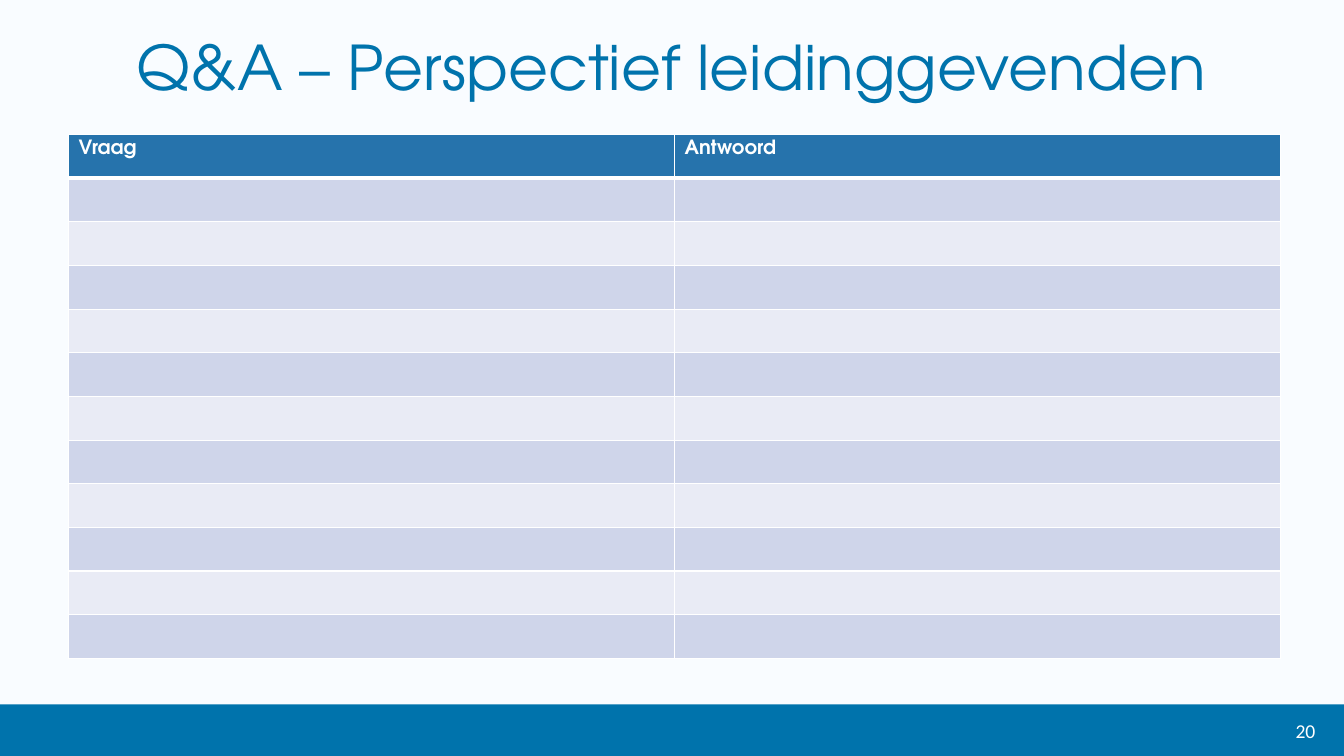
from lxml.etree import SubElement
from pptx import Presentation
from pptx.dml.color import RGBColor
from pptx.enum.shapes import MSO_SHAPE
from pptx.enum.text import MSO_ANCHOR, MSO_AUTO_SIZE, PP_ALIGN
from pptx.oxml.ns import qn
from pptx.util import Cm, Pt

COLORS = {
    "back": "F9FCFF",
    "blue": "0073AC",
    "head": "2673AC",
    "odd": "CFD5EA",
    "even": "E9EBF5",
    "white": "FFFFFF",
}
FONT = "TeX Gyre Adventor"
WIDTH, HEIGHT = Cm(33.87), Cm(19.05)
HEADS = ["Vraag", "Antwoord"]
ROWS = 12


def color(name):
    return RGBColor.from_string(COLORS[name])


def paint(fill, name):
    fill.solid()
    fill.fore_color.rgb = color(name)


def style(para, size, tint, face=FONT, bold=False):
    font = para.font
    font.name, font.size, font.bold = face, Pt(size), bold
    font.color.rgb = color(tint)


def edge(cell, low):
    """Draw white borders, with the bottom one of the given width."""
    props = cell._tc.get_or_add_tcPr()
    sides = {"lnL": 1, "lnR": 1, "lnT": 1, "lnB": low}
    for spot, (side, width) in enumerate(sides.items()):
        line = SubElement(props, qn(f"a:{side}"), w=str(Pt(width)))
        fill = SubElement(line, qn("a:solidFill"))
        SubElement(fill, qn("a:srgbClr"), val=COLORS["white"])
        props.insert(spot, line)


def add_bar(slide):
    top = Cm(17.75)
    bar = slide.shapes.add_shape(MSO_SHAPE.RECTANGLE, 0, top, WIDTH, HEIGHT - top)
    bar.shadow.inherit = False
    paint(bar.fill, "blue")
    bar.line.fill.background()


def add_number(slide, text):
    box = slide.shapes.add_textbox(Cm(27.48), Cm(18.03), Cm(5.92), Cm(0.76))
    frame = box.text_frame
    frame.word_wrap = True
    frame.vertical_anchor = MSO_ANCHOR.MIDDLE
    para = frame.paragraphs[0]
    para.text = text
    para.alignment = PP_ALIGN.RIGHT
    style(para, 14, "white", "Calibri")


def set_title(slide, text):
    title = slide.shapes.title
    title.left, title.top = Cm(0.66), Cm(0.76)
    title.width, title.height = Cm(32.54), Cm(1.98)
    frame = title.text_frame
    frame.word_wrap = True
    frame.auto_size = MSO_AUTO_SIZE.NONE
    frame.vertical_anchor = MSO_ANCHOR.TOP
    frame.margin_left = frame.margin_right = Cm(0.33)
    frame.margin_top = frame.margin_bottom = Cm(0.18)
    para = frame.paragraphs[0]
    para.text = text
    para.alignment = PP_ALIGN.CENTER
    para.line_spacing = 0.9
    style(para, 44, "blue")


def add_grid(slide):
    frame = slide.shapes.add_table(
        ROWS, len(HEADS), Cm(1.73), Cm(3.39), Cm(30.54), Cm(1.1) * ROWS)
    table = frame.table
    for index, row in enumerate(table.rows):
        band = "odd" if index % 2 else "even"
        for cell in row.cells:
            paint(cell.fill, band if index else "head")
            edge(cell, 1 if index else 3)
    # Header row
    for cell, text in zip(table.rows[0].cells, HEADS):
        cell.text = text
        style(cell.text_frame.paragraphs[0], 14, "white", bold=True)


def main():
    deck = Presentation()
    deck.slide_width, deck.slide_height = WIDTH, HEIGHT
    slide = deck.slides.add_slide(deck.slide_layouts[5])
    paint(slide.background.fill, "back")
    # Footer
    add_bar(slide)
    add_number(slide, "20")
    # Content
    set_title(slide, "Q&A – Perspectief leidinggevenden")
    add_grid(slide)
    deck.save("out.pptx")


if __name__ == "__main__":
    main()
